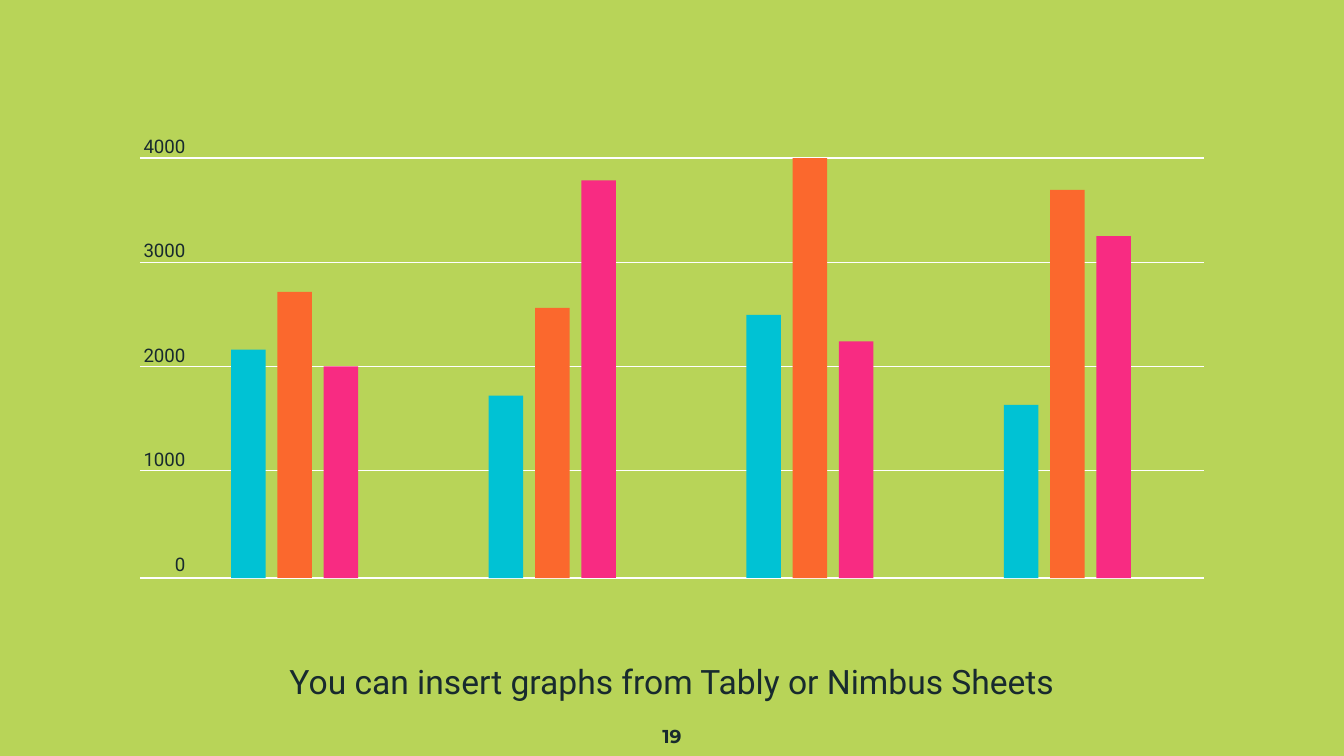
from pptx import Presentation
from pptx.dml.color import RGBColor
from pptx.enum import shapes, text
from pptx.oxml import ns, xmlchemy
from pptx.util import Pt

INK, WHITE, LIME = "182A2E", "FFFFFF", "B8D458"
SERIES_COLORS = ("00C2D4", "FB682D", "F82B82")
BAR_HEIGHTS = (
    (122.4, 153.3, 113.4),
    (97.7, 144.7, 213),
    (141, 225, 126.8),
    (92.8, 208, 183.2),
)
AXIS_LABELS = ("4000", "3000", "2000", "1000", "0")
GRID_LEFT, GRID_RIGHT, GRID_TOP, GRID_STEP, BASELINE = 75, 645, 84.7, 55.8, 309.7
BAR_LEFT, BAR_WIDTH, BAR_STEP, GROUP_STEP = 123.8, 18.5, 24.8, 138


def color(value):
    return RGBColor.from_string(value)


def write(paragraph, content, size=10, font="Roboto", bold=False,
          align=text.PP_ALIGN.CENTER, before=0, after=0):
    paragraph.alignment = align
    paragraph.space_before, paragraph.space_after = Pt(before), Pt(after)
    run = paragraph.add_run()
    run.text = content
    run.font.size, run.font.name, run.font.bold = Pt(size), font, bold
    run.font.color.rgb = color(INK)


class SlideBuilder:
    def __init__(self, slide, line_width=0.75):
        self.slide = slide
        self.line_width = line_width
        slide.background.fill.solid()
        slide.background.fill.fore_color.rgb = color(LIME)

    def frame(self, shape, inset):
        frame = shape.text_frame
        frame.word_wrap = True
        frame.auto_size = text.MSO_AUTO_SIZE.NONE
        frame.vertical_anchor = text.MSO_ANCHOR.TOP
        frame.margin_left = frame.margin_right = Pt(inset)
        frame.margin_top = frame.margin_bottom = Pt(inset)
        return frame

    def title(self, left, top, width, height, content, **style):
        shape = self.slide.shapes.title
        shape.left, shape.top = Pt(left), Pt(top)
        shape.width, shape.height = Pt(width), Pt(height)
        write(self.frame(shape, 7.2).paragraphs[0], content, **style)

    def text_box(self, left, top, width, height, inset=7.2):
        shape = self.slide.shapes.add_textbox(Pt(left), Pt(top), Pt(width), Pt(height))
        return self.frame(shape, inset)

    def line(self, left, right, y):
        connector = self.slide.shapes.add_connector(
            shapes.MSO_CONNECTOR.STRAIGHT, Pt(left), Pt(y), Pt(right), Pt(y))
        connector.line.color.rgb = color(WHITE)
        connector.line.width = Pt(self.line_width)
        properties = connector._element.spPr
        properties.append(xmlchemy.OxmlElement("a:effectLst"))

    def bar(self, left, bottom, width, height, fill):
        shape = self.slide.shapes.add_shape(
            shapes.MSO_SHAPE.RECTANGLE, Pt(left), Pt(bottom - height), Pt(width), Pt(height))
        shape.shadow.inherit = False
        shape.fill.solid()
        shape.fill.fore_color.rgb = color(fill)
        shape.line.fill.background()


def main():
    presentation = Presentation()
    presentation.slide_width, presentation.slide_height = Pt(720), Pt(405)
    builder = SlideBuilder(presentation.slides.add_slide(presentation.slide_layouts[5]))

    builder.title(36, 347, 648, 41, "You can insert graphs from Tably or Nimbus Sheets",
                  size=18, before=3.6)
    page_number = builder.text_box(338.4, 381, 43.2, 24.3)
    write(page_number.paragraphs[0], "19", font="Montserrat", bold=True)

    for index in range(4):
        builder.line(GRID_LEFT, GRID_RIGHT, GRID_TOP + index * GRID_STEP)
    builder.line(GRID_LEFT, GRID_RIGHT, BASELINE)

    axis = builder.text_box(GRID_LEFT, 72, 24.3, 238, inset=0)
    for index, label in enumerate(AXIS_LABELS):
        paragraph = axis.add_paragraph() if index else axis.paragraphs[0]
        write(paragraph, label, align=text.PP_ALIGN.RIGHT, before=44 if index else 0)

    for group, heights in enumerate(BAR_HEIGHTS):
        for series, (height, fill) in enumerate(zip(heights, SERIES_COLORS)):
            left = BAR_LEFT + group * GROUP_STEP + series * BAR_STEP
            builder.bar(left, BASELINE, BAR_WIDTH, height, fill)

    presentation.save("out.pptx")


if __name__ == "__main__":
    main()
